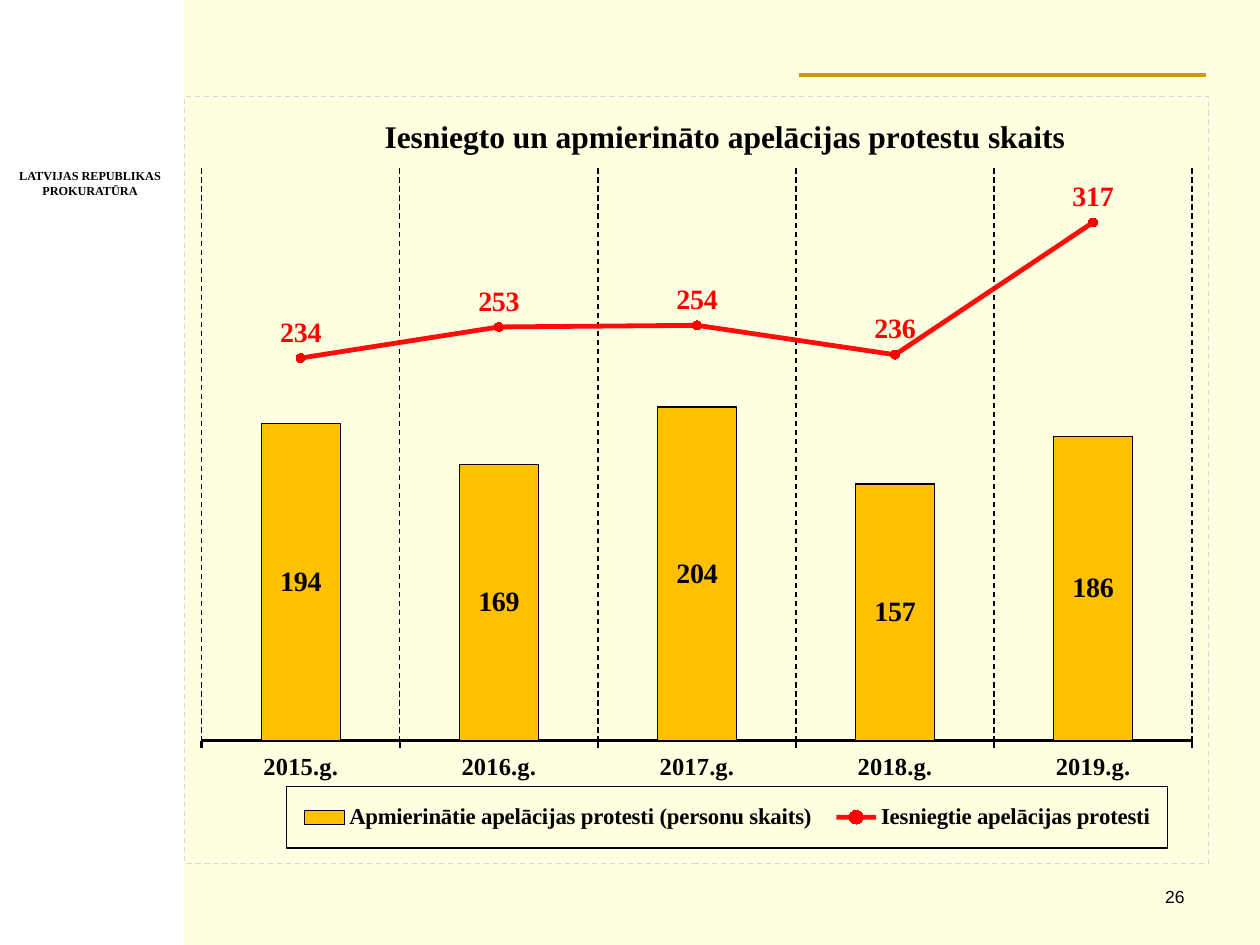
from lxml import etree
from pptx import Presentation
from pptx.chart.data import CategoryChartData
from pptx.dml.color import RGBColor
from pptx.enum.chart import (XL_CHART_TYPE, XL_LABEL_POSITION, XL_LEGEND_POSITION,
                             XL_MARKER_STYLE, XL_TICK_MARK)
from pptx.enum.dml import MSO_LINE
from pptx.enum.shapes import MSO_CONNECTOR, MSO_SHAPE
from pptx.enum.text import PP_ALIGN
from pptx.oxml import parse_xml
from pptx.oxml.ns import nsdecls, qn
from pptx.util import Pt

COLUMN = XL_CHART_TYPE.COLUMN_CLUSTERED
MID, ABOVE = XL_LABEL_POSITION.CENTER, XL_LABEL_POSITION.ABOVE
BOTTOM = XL_LEGEND_POSITION.BOTTOM
CIRCLE = XL_MARKER_STYLE.CIRCLE
OUT, NONE = XL_TICK_MARK.OUTSIDE, XL_TICK_MARK.NONE
DASH = MSO_LINE.DASH
RECT, STRAIGHT = MSO_SHAPE.RECTANGLE, MSO_CONNECTOR.STRAIGHT
CENTER, RIGHT = PP_ALIGN.CENTER, PP_ALIGN.RIGHT
SERIF = "Times New Roman"
BLACK, WHITE, CREAM = "000000", "FFFFFF", "FFFFE1"
GOLD, AMBER, RED, GRAY = "CC9900", "FFC000", "FF0000", "D9D9D9"

YEARS = [f"{year}.g." for year in range(2015, 2020)]
GRANTED = ("Apmierinātie apelācijas protesti (personu skaits)", (194, 169, 204, 157, 186))
FILED = ("Iesniegtie apelācijas protesti", (234, 253, 254, 236, 317))


def color(value):
    """Turn a hex string into a colour."""
    return RGBColor.from_string(value)


def style(font, size, tint=BLACK, bold=True, name=SERIF):
    """Set the look of a font."""
    font.size, font.bold, font.name = Pt(size), bold, name
    font.color.rgb = color(tint)


def stroke(line, tint, width):
    """Set the colour and width of a line."""
    line.color.rgb = color(tint)
    line.width = Pt(width)


def write(slide, box, lines, align, wrap, **look):
    """Add a text box with one paragraph a line."""
    frame = slide.shapes.add_textbox(*map(Pt, box)).text_frame
    frame.word_wrap = wrap
    frame.text = "\n".join(lines)
    for para in frame.paragraphs:
        para.alignment = align
        for run in para.runs:
            style(run.font, **look)
    return frame


def place(part, index, **spots):
    """Give a chart part a manual layout at a child index."""
    for old in part.findall(qn("c:layout")):
        part.remove(old)
    layout = etree.Element(qn("c:layout"))
    manual = etree.SubElement(layout, qn("c:manualLayout"))
    for tag, value in spots.items():
        etree.SubElement(manual, qn("c:" + tag)).set("val", str(value))
    part.insert(index, layout)


def border(fill, tint, dash):
    """Make the fill and outline of a chart part."""
    return parse_xml(
        f'<c:spPr {nsdecls("c", "a")}><a:solidFill><a:srgbClr val="{fill}"/></a:solidFill>'
        f'<a:ln w="{Pt(0.75)}"><a:solidFill><a:srgbClr val="{tint}"/></a:solidFill>'
        f'<a:prstDash val="{dash}"/></a:ln></c:spPr>')


def split(chart):
    """Move the second series of a column chart to a line plot."""
    bars = chart.plots[0]._element
    series = bars.findall(qn("c:ser"))[1]
    for flag in series.findall(qn("c:invertIfNegative")):
        series.remove(flag)
    plot = parse_xml(
        f'<c:lineChart {nsdecls("c")}><c:grouping val="standard"/>'
        '<c:varyColors val="0"/><c:marker val="1"/></c:lineChart>')
    plot.insert(2, series)
    for axis in bars.findall(qn("c:axId")):
        etree.SubElement(plot, qn("c:axId")).set("val", axis.get("val"))
    bars.addnext(plot)


def label(series, spot, tint):
    """Show the values of a series."""
    labels = series.data_labels
    labels.show_value = True
    labels.position = spot
    style(labels.font, 16, tint)


def draw_bars(plot):
    """Format the column plot."""
    plot.gap_width = 150
    plot.vary_by_categories = False
    series = plot.series[0]
    series.format.fill.solid()
    series.format.fill.fore_color.rgb = color(AMBER)
    stroke(series.format.line, BLACK, 0.75)
    label(series, MID, BLACK)


def draw_line(plot):
    """Format the line plot."""
    series = plot.series[0]
    series.smooth = False
    stroke(series.format.line, RED, 2.75)
    tint = series._element.find(qn("c:spPr")).find(".//" + qn("a:srgbClr"))
    etree.SubElement(tint, qn("a:alpha")).set("val", "94000")
    marker = series.marker
    marker.style, marker.size = CIRCLE, 5
    marker.format.fill.solid()
    marker.format.fill.fore_color.rgb = color(RED)
    stroke(marker.format.line, RED, 0.75)
    label(series, ABOVE, RED)


def draw_axes(chart):
    """Format the year axis and hide the value axis."""
    years, values = chart.category_axis, chart.value_axis
    years.major_tick_mark, years.minor_tick_mark = OUT, NONE
    style(years.tick_labels.font, 14)
    stroke(years.format.line, BLACK, 1.5)
    years.has_major_gridlines = True
    grid = years.major_gridlines.format.line
    stroke(grid, BLACK, 0.75)
    grid.dash_style = DASH
    values.minimum_scale, values.maximum_scale = 0, 350
    values.has_major_gridlines = False
    values.visible = False


def draw_title(chart):
    """Add the chart title."""
    title = chart.chart_title
    title.text_frame.text = "Iesniegto un apmierināto apelācijas protestu skaits"
    style(title.text_frame.paragraphs[0].runs[0].font, 18)
    title.include_in_layout = False
    place(title._element, 1, xMode="edge", yMode="edge", x=0.19, y=0.02)


def draw_legend(chart):
    """Add the framed legend."""
    chart.has_legend = True
    legend = chart.legend
    legend.position = BOTTOM
    legend.include_in_layout = False
    style(legend.font, 13)
    part = legend._element
    part.find(qn("c:txPr")).addprevious(border(CREAM, BLACK, "solid"))
    place(part, 1, xMode="edge", yMode="edge", x=0.1, y=0.9, w=0.86, h=0.08)


def draw_chart(slide, box):
    """Add the combined column and line chart."""
    data = CategoryChartData()
    data.categories = YEARS
    for name, values in (GRANTED, FILED):
        data.add_series(name, values)
    chart = slide.shapes.add_chart(COLUMN, *map(Pt, box), data).chart
    style(chart.font, 10, bold=False)
    split(chart)
    draw_bars(chart.plots[0])
    draw_line(chart.plots[1])
    draw_axes(chart)
    draw_title(chart)
    draw_legend(chart)
    body = chart.element.find(qn("c:chart"))
    place(body.find(qn("c:plotArea")), 0, layoutTarget="inner", xMode="edge",
          yMode="edge", x=0.017, y=0.094, w=0.967, h=0.746)
    body.addnext(border(CREAM, GRAY, "dash"))


def draw_side(slide, box):
    """Add the white side band with the office name."""
    band = slide.shapes.add_shape(RECT, *map(Pt, box))
    band.shadow.inherit = False
    band.fill.solid()
    band.fill.fore_color.rgb = color(WHITE)
    band.line.fill.background()
    left, top, width, _ = box
    write(slide, (left + 3.6, top + 92.9, width - 9.4, 23.8),
          ("LATVIJAS REPUBLIKAS", "PROKURATŪRA"), CENTER, False, size=7)


def draw_rule(slide, left, right, top):
    """Add the gold rule above the chart."""
    rule = slide.shapes.add_connector(STRAIGHT, Pt(left), Pt(top), Pt(right), Pt(top))
    stroke(rule.line, GOLD, 2.25)
    etree.SubElement(rule._element.spPr, qn("a:effectLst"))


def main():
    """Build and save the slide."""
    deck = Presentation()
    deck.slide_width, deck.slide_height = Pt(720), Pt(540)
    slide = deck.slides.add_slide(deck.slide_layouts[6])
    slide.background.fill.solid()
    slide.background.fill.fore_color.rgb = color(CREAM)
    draw_side(slide, (0, 0, 105, 540))
    draw_rule(slide, 456.5, 689, 43)
    page = write(slide, (534, 502.5, 150, 25), ("26",), RIGHT, True,
                 size=10, bold=False, name="Arial")
    page.paragraphs[0].space_after = Pt(6)
    draw_chart(slide, (105, 54.7, 586, 439))
    deck.save("out.pptx")


if __name__ == "__main__":
    main()
